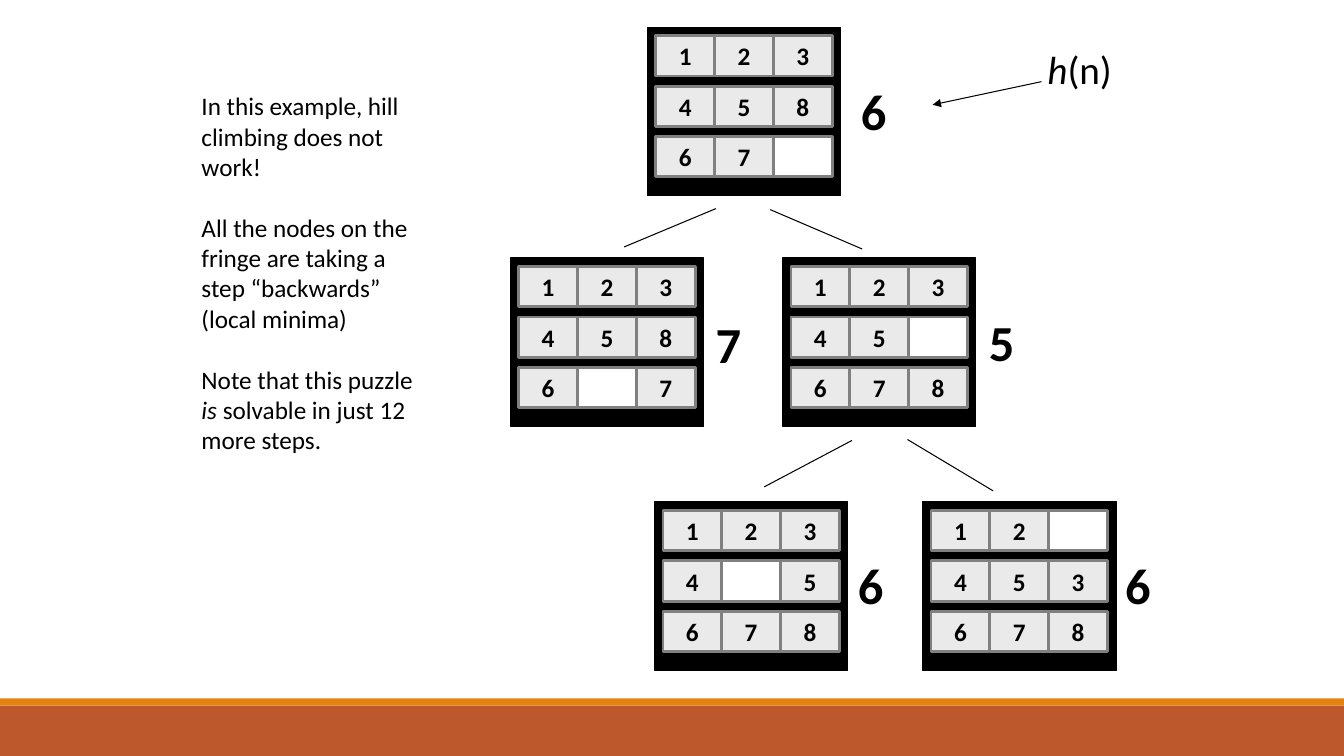
from dataclasses import dataclass

from lxml import etree
from pptx import Presentation
from pptx.dml.color import RGBColor
from pptx.enum.shapes import MSO_CONNECTOR, MSO_SHAPE
from pptx.enum.text import MSO_ANCHOR, PP_ALIGN
from pptx.oxml.ns import qn
from pptx.util import Inches, Pt

RECT = MSO_SHAPE.RECTANGLE
STRAIGHT = MSO_CONNECTOR.STRAIGHT
CENTER = PP_ALIGN.CENTER
MIDDLE = MSO_ANCHOR.MIDDLE
TOP = MSO_ANCHOR.TOP

BLACK, WHITE, TILE, EDGE = "000000", "FFFFFF", "EAEAEA", "808080"
RUST, ORANGE = "BD582C", "E48312"

BODY = {"name": "Calibri", "size": Pt(18), "bold": False}
DIGIT = BODY | {"bold": True}
SCORE = DIGIT | {"size": Pt(36)}
LABEL = BODY | {"size": Pt(28)}
ITALIC = {"italic": True}

BOARD_W, BOARD_H = 1.92, 1.67
TILE_W, TILE_H = 1.75 / 3, 0.4
ROW_STEP = 0.5
MARGIN = (BOARD_W - 3 * TILE_W) / 2


@dataclass
class Board:
    left: float
    top: float
    tiles: str  # row by row, a space for the gap
    score: str
    score_left: float
    score_top: float


@dataclass
class Link:
    x1: float
    y1: float
    x2: float
    y2: float
    arrow: bool = False


@dataclass
class Para:
    runs: list[tuple[str, dict]]
    before: float = 0


BOARDS = [
    Board(6.42, 0.27, "12345867 ", "6", 8.44, 0.75),
    Board(7.76, 2.56, "12345 678", "5", 9.71, 3.04),
    Board(5.06, 2.56, "1234586 7", "7", 7.0, 3.06),
    Board(6.49, 4.98, "1234 5678", "6", 8.41, 5.45),
    Board(9.15, 4.98, "12 453678", "6", 11.06, 5.45),
]
LINKS = [
    Link(7.1, 2.07, 6.19, 2.45),
    Link(7.64, 2.08, 8.55, 2.47),
    Link(8.45, 4.37, 7.58, 4.83),
    Link(9.0, 4.36, 9.85, 4.87),
    Link(10.33, 0.81, 9.25, 1.04, arrow=True),
]
LINE_GAP = 22
REMARKS = [
    Para([("In this example, hill climbing does not work!", {})]),
    Para([("All the nodes on the fringe are taking a step “backwards”", {})], LINE_GAP),
    Para([("(local minima)", {})]),
    Para([("Note that this puzzle ", {}), ("is", ITALIC),
          (" solvable in just 12 more steps.", {})], LINE_GAP),
]


def color(code: str) -> RGBColor:
    return RGBColor.from_string(code)


def add_run(para, text: str, style: dict) -> None:
    run = para.add_run()
    run.text = text
    run.font.color.rgb = color(BLACK)
    for key, value in style.items():
        setattr(run.font, key, value)


def add_rect(shapes, left: float, top: float, width: float, height: float,
             fill: str, edge: str = "", weight: float = 0.75):
    box = shapes.add_shape(RECT, Inches(left), Inches(top), Inches(width), Inches(height))
    box.shadow.inherit = False
    box.fill.solid()
    box.fill.fore_color.rgb = color(fill)
    if edge:
        box.line.color.rgb = color(edge)
        box.line.width = Pt(weight)
    else:
        box.line.fill.background()
    return box


def add_text(shapes, left: float, top: float, width: float, height: float,
             paras: list[Para], style: dict, wrap: bool = False) -> None:
    box = shapes.add_textbox(Inches(left), Inches(top), Inches(width), Inches(height))
    frame = box.text_frame
    frame.word_wrap = wrap
    frame.vertical_anchor = TOP
    for i, item in enumerate(paras):
        para = frame.add_paragraph() if i else frame.paragraphs[0]
        para.space_before = Pt(item.before)
        for text, extra in item.runs:
            add_run(para, text, style | extra)


def add_board(shapes, board: Board) -> None:
    """Draw one puzzle state as a group, with its score beside it."""
    group = shapes.add_group_shape().shapes
    add_rect(group, board.left, board.top, BOARD_W, BOARD_H, BLACK, BLACK)
    for i, digit in enumerate(board.tiles):
        row, col = divmod(i, 3)
        blank = digit == " "
        tile = add_rect(group, board.left + MARGIN + col * TILE_W,
                        board.top + MARGIN + row * ROW_STEP, TILE_W, TILE_H,
                        WHITE if blank else TILE, EDGE, 2)
        if not blank:
            tile.text_frame.vertical_anchor = MIDDLE
            para = tile.text_frame.paragraphs[0]
            para.alignment = CENTER
            add_run(para, digit, DIGIT)
    add_text(group, board.score_left, board.score_top, 0.46, 0.71,
             [Para([(board.score, {})])], SCORE)


def add_link(shapes, link: Link) -> None:
    line = shapes.add_connector(STRAIGHT, Inches(link.x1), Inches(link.y1),
                                Inches(link.x2), Inches(link.y2))
    line.line.color.rgb = color(BLACK)
    line.line.width = Pt(0.75)
    if link.arrow:
        etree.SubElement(line.line._get_or_add_ln(), qn("a:tailEnd"), type="triangle")
    etree.SubElement(line._element.spPr, qn("a:effectLst"))


def main() -> None:
    deck = Presentation()
    deck.slide_width, deck.slide_height = Inches(13.33), Inches(7.5)
    shapes = deck.slides.add_slide(deck.slide_layouts[6]).shapes

    add_rect(shapes, 0, 7, 13.33, 0.5, RUST)
    add_rect(shapes, 0, 6.93, 13.33, 0.07, ORANGE)
    for board in BOARDS:
        add_board(shapes, board)
    for link in LINKS:
        add_link(shapes, link)
    add_text(shapes, 1.9, 0.85, 2.39, 3.74, REMARKS, BODY, wrap=True)
    add_text(shapes, 10.29, 0.4, 0.85, 0.57,
             [Para([("h", ITALIC), ("(n)", {})])], LABEL)
    deck.save("out.pptx")


if __name__ == "__main__":
    main()
